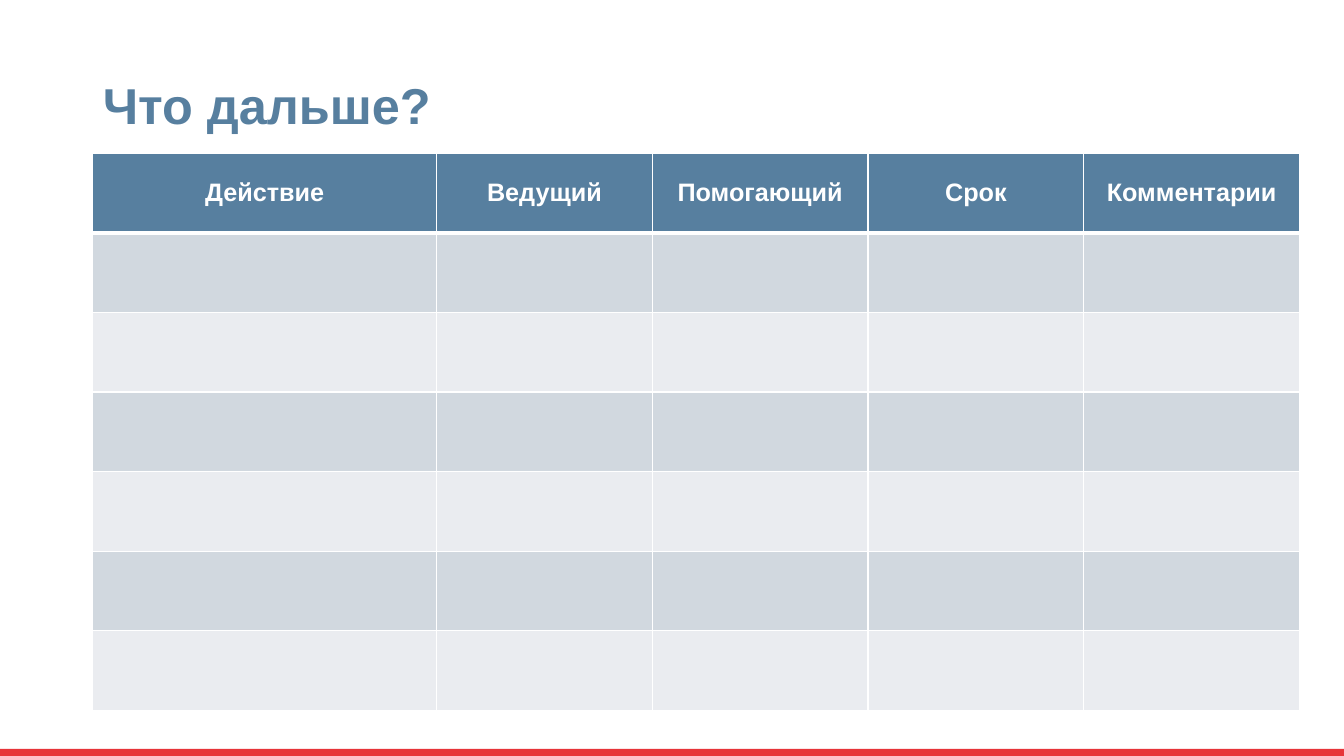
from dataclasses import dataclass

from lxml.etree import SubElement
from pptx import Presentation
from pptx.dml.color import RGBColor
from pptx.enum.shapes import MSO_SHAPE
from pptx.enum.text import MSO_ANCHOR, PP_ALIGN
from pptx.oxml import parse_xml
from pptx.oxml.ns import nsdecls
from pptx.util import Emu, Pt

PX = 9144
SLIDE_W, SLIDE_H = 1333, 750
HEADERS = ["Действие", "Ведущий", "Помогающий", "Срок", "Комментарии"]
COLUMN_WIDTHS = [341, 214, 214, 214, 214]
ROW_COUNT, ROW_HEIGHT = 7, 79


@dataclass(frozen=True)
class Theme:
    """Colours, font and type sizes of the slide."""
    font: str = "Arial"
    blue: str = "577F9F"
    white: str = "FFFFFF"
    red: str = "E73439"
    bands: tuple = ("D1D8DF", "EAECF0")
    title_size: int = 36
    header_size: int = 18
    thin: int = 1
    thick: int = 3


THEME = Theme()


def px(*lengths):
    """Turn pixel lengths into EMU."""
    return [Emu(length * PX) for length in lengths]


def style_text(p, size, color):
    """Set the bold theme font on a paragraph."""
    p.font.name = THEME.font
    p.font.size = Pt(size)
    p.font.bold = True
    p.font.color.rgb = RGBColor.from_string(color)


def add_footer_bar(slide, box):
    """Draw the red bar in the given box."""
    sp = slide.shapes.add_shape(MSO_SHAPE.RECTANGLE, *px(*box))
    sp.shadow.inherit = False
    sp.fill.solid()
    sp.fill.fore_color.rgb = RGBColor.from_string(THEME.red)
    sp.line.fill.background()


def set_title(slide, box, text):
    """Place and format the title in the given box."""
    title = slide.shapes.title
    title.left, title.top, title.width, title.height = px(*box)
    tf = title.text_frame
    tf.text = text
    tf.word_wrap = True
    tf.vertical_anchor = MSO_ANCHOR.MIDDLE
    p = tf.paragraphs[0]
    p.alignment = PP_ALIGN.LEFT
    p.line_spacing = 0.9
    style_text(p, THEME.title_size, THEME.blue)


def set_borders(cell, top, bottom):
    """Give a cell white borders with the given top and bottom widths."""
    widths = {"lnL": THEME.thin, "lnR": THEME.thin, "lnT": top, "lnB": bottom}
    tc_pr = cell._tc.get_or_add_tcPr()
    for i, (side, width) in enumerate(widths.items()):
        ln = parse_xml(f'<a:{side} {nsdecls("a")} w="{Pt(width)}"><a:solidFill/></a:{side}>')
        SubElement(ln[0], ln[0].tag.replace("solidFill", "srgbClr"), val=THEME.white)
        tc_pr.insert(i, ln)


def add_action_table(slide, box):
    """Build the action plan table in the given box."""
    table = slide.shapes.add_table(ROW_COUNT, len(HEADERS), *px(*box)).table
    table.horz_banding = False
    for column, width in zip(table.columns, COLUMN_WIDTHS):
        column.width = Emu(width * PX)
    for r, row in enumerate(table.rows):
        row.height = Emu(ROW_HEIGHT * PX)
        color = THEME.bands[(r - 1) % 2] if r else THEME.blue
        for cell in row.cells:
            cell.fill.solid()
            cell.fill.fore_color.rgb = RGBColor.from_string(color)
            set_borders(cell, THEME.thick if r == 1 else THEME.thin,
                        THEME.thin if r else THEME.thick)
    for cell, header in zip(table.rows[0].cells, HEADERS):
        cell.text = header
        cell.vertical_anchor = MSO_ANCHOR.MIDDLE
        p = cell.text_frame.paragraphs[0]
        p.alignment = PP_ALIGN.CENTER
        style_text(p, THEME.header_size, THEME.white)


def main():
    """Build and save the slide."""
    prs = Presentation()
    prs.slide_width, prs.slide_height = px(SLIDE_W, SLIDE_H)
    slide = prs.slides.add_slide(prs.slide_layouts[5])
    add_footer_bar(slide, (0, 743, SLIDE_W, SLIDE_H - 743))
    set_title(slide, (92, 64, 1150, 87), "Что дальше?")
    add_action_table(slide, (92, 152, sum(COLUMN_WIDTHS), ROW_COUNT * ROW_HEIGHT))
    prs.save("out.pptx")


if __name__ == "__main__":
    main()
